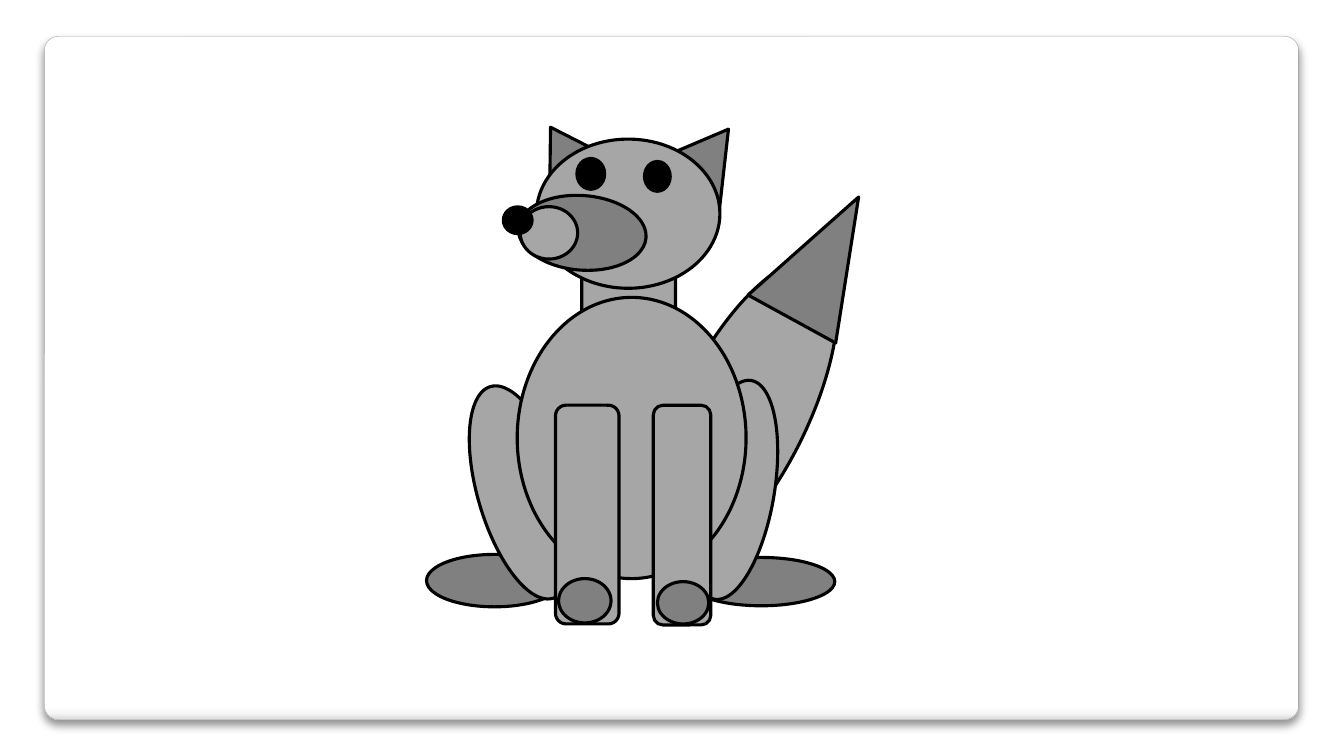
from dataclasses import dataclass

import lxml.etree
import pptx
import pptx.dml.color
import pptx.enum.shapes
import pptx.oxml.ns
import pptx.util

Inches = pptx.util.Inches
Kind = pptx.enum.shapes.MSO_SHAPE
OVAL, ROUNDED, TRIANGLE = Kind.OVAL, Kind.ROUNDED_RECTANGLE, Kind.ISOSCELES_TRIANGLE

COLORS = {
    "fur": "A6A6A6",
    "dark fur": "808080",
    "black": "000000",
    "card edge": "A4A4A4",
}
CARD_STOPS = ((0, "FFFFFF"), (98, "FFFFFF"), (99, "F7F7F7"), (100, "DADADA"))
OUTLINE = 2.25
THICK_OUTLINE = 3.35


@dataclass(frozen=True)
class Part:
    kind: Kind
    left: float
    top: float
    width: float
    height: float
    color: str = "fur"
    rotation: float = 0
    outline: float = OUTLINE


# Back to front
FOX_PARTS = {
    "tail": Part(OVAL, 6.74, 2.44, 1.26, 3.34, rotation=26.5),
    "right hind foot": Part(OVAL, 6.82, 5.53, 1.46, 0.48, "dark fur"),
    "left hind foot": Part(OVAL, 4.23, 5.5, 1.35, 0.52, "dark fur"),
    "neck": Part(ROUNDED, 5.77, 2.65, 0.93, 0.63),
    "left hind leg": Part(OVAL, 4.74, 3.79, 0.87, 2.19, rotation=343.5),
    "right hind leg": Part(OVAL, 6.86, 3.76, 0.82, 2.2, rotation=9.5),
    "body": Part(OVAL, 5.13, 2.95, 2.27, 2.79),
    "left front leg": Part(ROUNDED, 5.51, 4.02, 0.63, 2.17),
    "right front leg": Part(ROUNDED, 6.48, 4.02, 0.57, 2.18),
    "left ear": Part(TRIANGLE, 5.25, 1.22, 0.72, 0.58, "dark fur", 328.9),
    "right ear": Part(TRIANGLE, 6.59, 1.21, 0.84, 0.72, "dark fur", 36.7),
    "tail tip": Part(TRIANGLE, 7.69, 1.87, 0.99, 1.38, "dark fur", 28.7),
    "head": Part(OVAL, 5.32, 1.38, 1.82, 1.48),
    "right eye": Part(OVAL, 6.4, 1.61, 0.24, 0.28, "black", outline=THICK_OUTLINE),
    "left eye": Part(OVAL, 5.73, 1.58, 0.26, 0.29, "black", outline=THICK_OUTLINE),
    "muzzle": Part(OVAL, 5.14, 1.94, 1.27, 0.74, "dark fur", 4.4),
    "snout": Part(OVAL, 5.16, 2.05, 0.57, 0.52),
    "nose": Part(OVAL, 5, 2.06, 0.27, 0.25, "black", outline=THICK_OUTLINE),
    "left paw": Part(OVAL, 5.54, 5.74, 0.52, 0.44, "dark fur"),
    "right paw": Part(OVAL, 6.52, 5.77, 0.51, 0.42, "dark fur"),
}


def rgb(color: str) -> pptx.dml.color.RGBColor:
    return pptx.dml.color.RGBColor.from_string(color)


def add_child(parent, tag: str, **attributes):
    """Append a DrawingML element and return it."""
    values = {key: str(value) for key, value in attributes.items()}
    return lxml.etree.SubElement(parent, pptx.oxml.ns.qn(tag), values)


def draw_card(slide) -> None:
    card = slide.shapes.add_shape(
        ROUNDED, Inches(0.44), Inches(0.36), Inches(12.44), Inches(6.78)
    )
    card.adjustments[0] = 0.021
    card.line.color.rgb = rgb(COLORS["card edge"])
    card.line.width = pptx.util.Pt(0.25)
    card.fill.gradient()
    card.fill.gradient_angle = 270
    properties = card._element.spPr
    stops = properties.find(".//" + pptx.oxml.ns.qn("a:gsLst"))
    for stop in list(stops):
        stops.remove(stop)
    for percent, color in CARD_STOPS:
        add_child(add_child(stops, "a:gs", pos=percent * 1000), "a:srgbClr", val=color)

    card.shadow.inherit = False
    effects = properties.find(pptx.oxml.ns.qn("a:effectLst"))
    shadow = add_child(
        effects, "a:outerShdw", blurRad=pptx.util.Pt(6), dist=pptx.util.Pt(4),
        dir=90 * 60000, algn="ctr", rotWithShape=0,
    )
    shadow_color = add_child(shadow, "a:srgbClr", val=COLORS["black"])
    add_child(shadow_color, "a:alpha", val=44000)


def draw_part(slide, part: Part) -> None:
    shape = slide.shapes.add_shape(
        part.kind, Inches(part.left), Inches(part.top),
        Inches(part.width), Inches(part.height),
    )
    shape.rotation = part.rotation
    shape.shadow.inherit = False
    shape.fill.solid()
    shape.fill.fore_color.rgb = rgb(COLORS[part.color])
    shape.line.color.rgb = rgb(COLORS["black"])
    shape.line.width = pptx.util.Pt(part.outline)


def main() -> None:
    presentation = pptx.Presentation()
    presentation.slide_width = Inches(13.33)
    presentation.slide_height = Inches(7.5)
    slide = presentation.slides.add_slide(presentation.slide_layouts[6])
    draw_card(slide)
    for part in FOX_PARTS.values():
        draw_part(slide, part)
    presentation.save("out.pptx")


if __name__ == "__main__":
    main()
